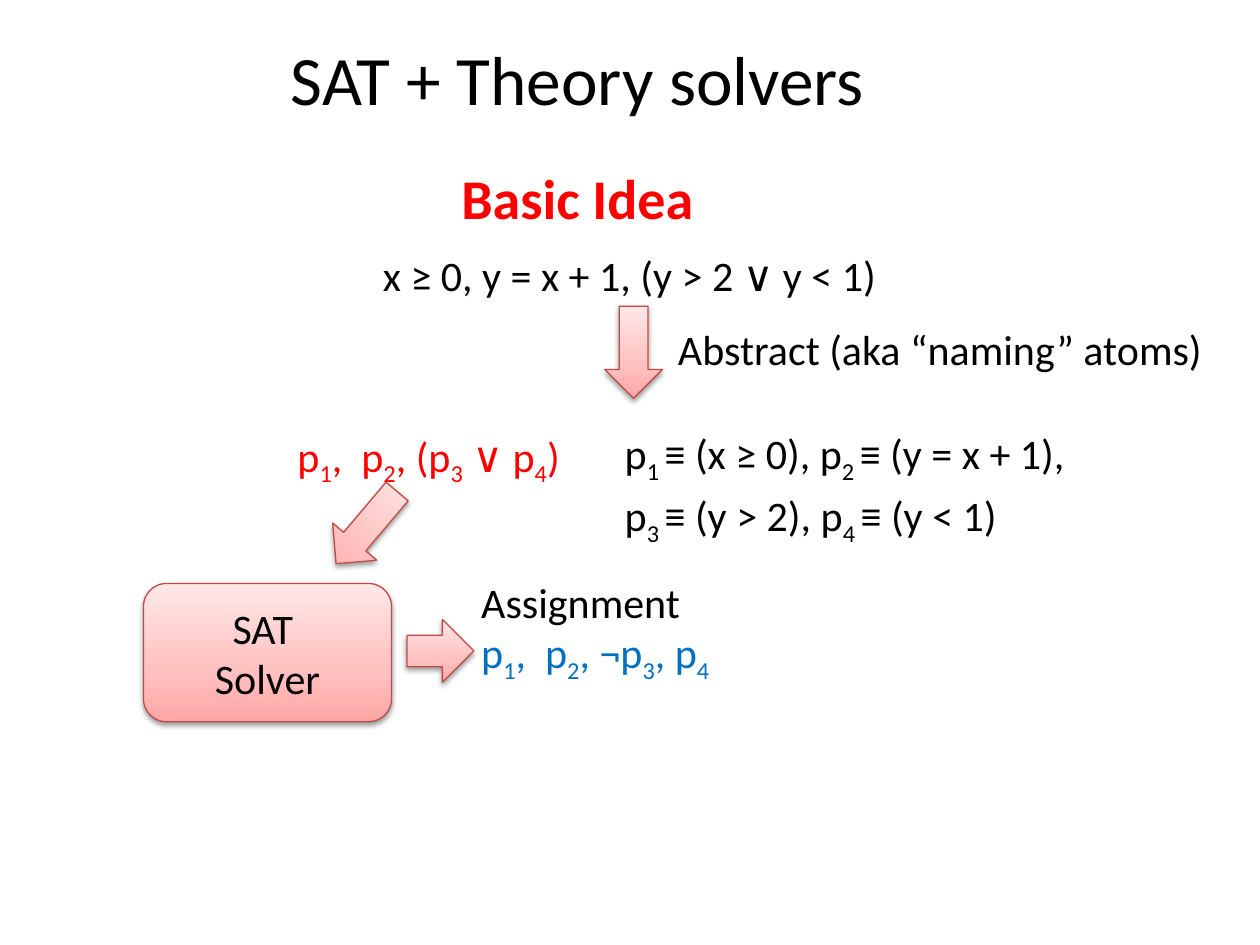
"""Build the slide on combining a SAT solver with theory solvers."""
from copy import deepcopy

from pptx import Presentation
from pptx.dml.color import RGBColor
from pptx.enum.shapes import MSO_SHAPE as SHAPE
from pptx.enum.text import MSO_ANCHOR as ANCHOR, PP_ALIGN as ALIGN
from pptx.oxml import parse_xml
from pptx.oxml.ns import nsdecls, qn
from pptx.util import Pt

COLORS = {
    "black": "000000", "red": "FF0000", "blue": "0070C0", "outline": "BF4C48",
    "deep": "FFA6A5", "middle": "FFC0BF", "pale": "FFE7E7",
}
SHADOW = (
    f'<a:effectLst {nsdecls("a")}><a:outerShdw blurRad="{Pt(3.1)}" dist="{Pt(1.6)}" '
    'dir="5400000" rotWithShape="0"><a:srgbClr val="000000"><a:alpha val="38000"/>'
    '</a:srgbClr></a:outerShdw></a:effectLst>'
)


def write(paragraph, text, color="black", size=24, align=ALIGN.LEFT, bold=False):
    """Fill a paragraph; pieces between bars become subscripts."""
    paragraph.alignment = align
    for position, piece in enumerate(text.split("|")):
        if not piece:
            continue
        run = paragraph.add_run()
        run.text = piece
        run.font.name, run.font.size, run.font.bold = "Calibri", Pt(size), bold
        run.font.color.rgb = RGBColor.from_string(COLORS[color])
        if position % 2:
            run.font._element.set("baseline", "-25000")


def add_block(kind, left, top, width, height, rotation=0):
    """Add a shape with the pink gradient, thin outline and soft shadow."""
    block = slide.shapes.add_shape(kind, Pt(left), Pt(top), Pt(width), Pt(height))
    block.rotation = rotation
    block.fill.gradient()
    block.fill.gradient_angle = 90
    stop_list = block._element.spPr.find(".//" + qn("a:gsLst"))
    stop_list.insert(1, deepcopy(stop_list[0]))
    shades = ((0, "deep"), (0.35, "middle"), (1, "pale"))
    for stop, (position, shade) in zip(block.fill.gradient_stops, shades):
        stop.position = position
        stop.color.rgb = RGBColor.from_string(COLORS[shade])
    block.line.color.rgb = RGBColor.from_string(COLORS["outline"])
    block.line.width = Pt(0.75)
    block._element.spPr.append(parse_xml(SHADOW))
    return block


deck = Presentation()
deck.slide_width, deck.slide_height = Pt(720), Pt(540)
slide = deck.slides.add_slide(deck.slide_layouts[5])

title = slide.shapes.title
title.left, title.top, title.width, title.height = Pt(0), Pt(18), Pt(660), Pt(52.5)
title.text_frame.vertical_anchor = ANCHOR.MIDDLE
write(title.text_frame.paragraphs[0], "SAT + Theory solvers", size=39.6, align=ALIGN.CENTER)

heading = slide.shapes.add_textbox(Pt(0), Pt(90), Pt(660), Pt(174)).text_frame
heading.word_wrap = True
write(heading.paragraphs[0], "Basic Idea", "red", 32, ALIGN.CENTER, bold=True)

notes = [
    (32.4, 146, 660, 26, ALIGN.CENTER, 0, [("x ≥ 0, y = x + 1, (y > 2 ∨ y < 1) ", "black")]),
    (170, 246.4, 171.4, 26, ALIGN.LEFT, 0, [("p|1|,  p|2|, (p|3| ∨ p|4|)", "red")]),
    (387.4, 188, 332.6, 26, ALIGN.LEFT, 0, [("Abstract (aka “naming” atoms)", "black")]),
    (357, 244.8, 293.8, 58.3, ALIGN.LEFT, 6, [
        ("p|1 |≡ (x ≥ 0), p|2 |≡ (y = x + 1),", "black"),
        ("p|3 |≡ (y > 2), p|4 |≡ (y < 1)", "black")]),
    (275, 332.6, 171.4, 52.6, ALIGN.LEFT, 0, [
        ("Assignment", "black"), ("p|1|,  p|2|, ¬p|3|, p|4|", "blue")]),
]
for left, top, width, height, align, gap, lines in notes:
    note = slide.shapes.add_textbox(Pt(left), Pt(top), Pt(width), Pt(height)).text_frame
    note.word_wrap = True
    note.margin_left = note.margin_right = note.margin_top = note.margin_bottom = 0
    for index, (text, color) in enumerate(lines):
        paragraph = note.add_paragraph() if index else note.paragraphs[0]
        paragraph.line_spacing = 0.9
        paragraph.space_before = Pt(gap if index else 0)
        write(paragraph, text, color, align=align)

add_block(SHAPE.DOWN_ARROW, 345.6, 175, 33, 52.6)
add_block(SHAPE.DOWN_ARROW, 193, 274.5, 33, 54, rotation=40.2)
add_block(SHAPE.RIGHT_ARROW, 232.6, 354, 38.2, 36)

solver = add_block(SHAPE.ROUNDED_RECTANGLE, 82, 333.4, 141.8, 79).text_frame
solver.vertical_anchor = ANCHOR.MIDDLE
solver.margin_left = solver.margin_right = Pt(8.64)
solver.margin_top = solver.margin_bottom = Pt(4.32)
write(solver.paragraphs[0], "SAT ", align=ALIGN.CENTER)
write(solver.add_paragraph(), "Solver", align=ALIGN.CENTER)

deck.save("out.pptx")
